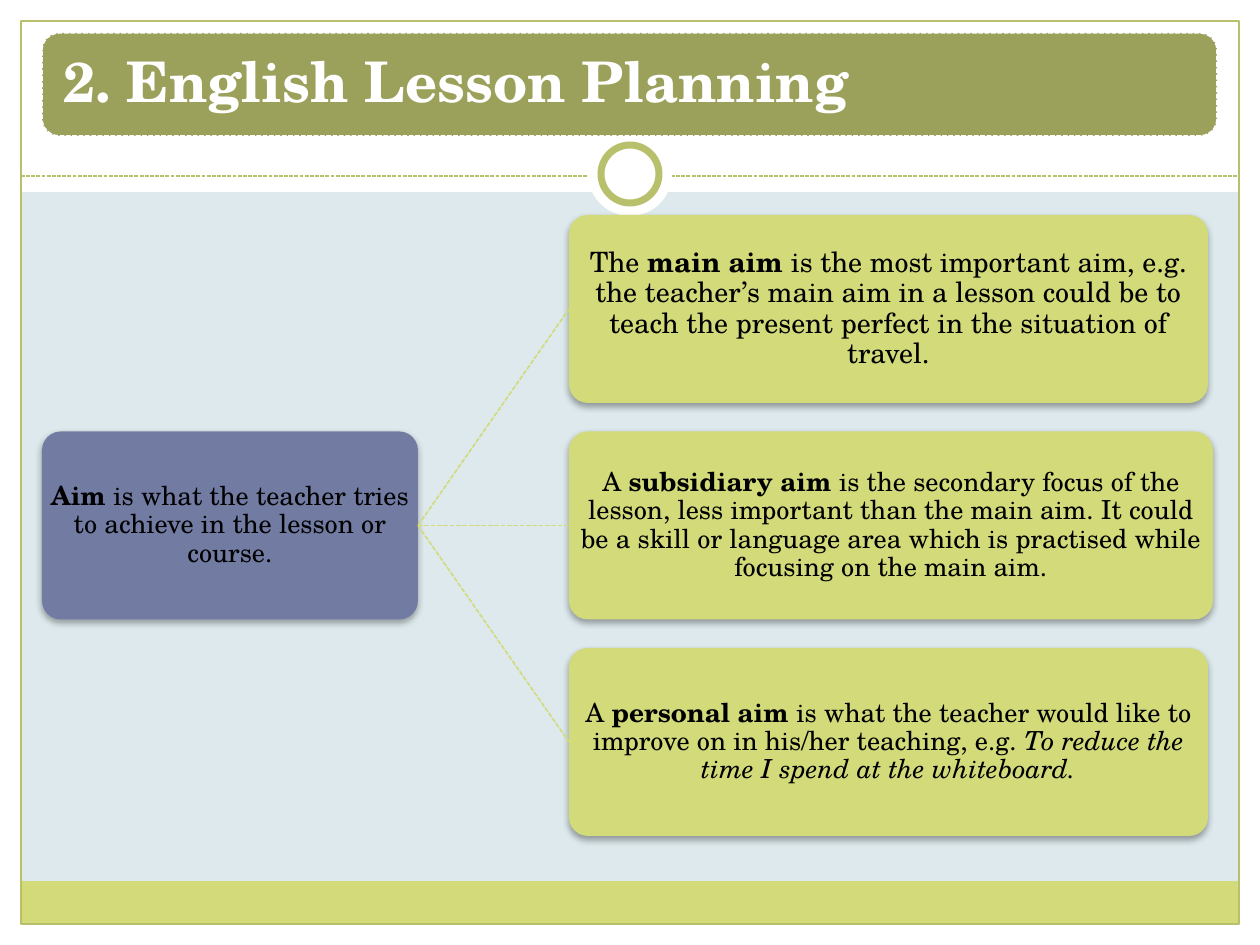
import pptx
import pptx.util
import pptx.dml.color
import pptx.enum.dml
import pptx.enum.shapes
import pptx.enum.text
from lxml import etree

SHAPE = pptx.enum.shapes.MSO_SHAPE
ALIGN = pptx.enum.text.PP_ALIGN
DRAWING = "http://schemas.openxmlformats.org/drawingml/2006/main"
FONT = "TeX Gyre Schola"

SLIDE_WIDTH, SLIDE_HEIGHT, MARGIN = 1260, 945, 21
WHITE, BLACK = "FFFFFF", "000000"
PALE_BLUE, LIME, GREEN = "DDE9EC", "D2DA7A", "B9C06C"
OLIVE, SLATE = "9BA15A", "727CA3"

AIM = [("Aim ", "b"), ("is what the teacher tries to achieve in the lesson or course.", "")]
# Width, text size and spans of each kind of aim
KINDS = [
    (639, 16, [("The ", ""), ("main aim ", "b"),
               ("is the most important aim, e.g. the teacher’s main aim in a lesson could "
                "be to teach the present perfect in the situation of travel.", "")]),
    (644, 15, [("A ", ""), ("subsidiary aim ", "b"),
               ("is the secondary focus of the lesson, less important than the main aim. "
                "It could be a skill or language area which is practised while focusing "
                "on the main aim.", "")]),
    (639, 15, [("A ", ""), ("personal aim ", "b"),
               ("is what the teacher would like to improve on in his/her teaching, e.g. ", ""),
               ("To reduce the time I spend at the whiteboard.", "i")]),
]


def px(length):
    return pptx.util.Emu(round(length * 914400 / 126))


def color(value):
    return pptx.dml.color.RGBColor.from_string(value)


def style_line(line, value, width, dashed=False):
    line.color.rgb = color(value)
    line.width = pptx.util.Pt(width)
    if dashed:
        line.dash_style = pptx.enum.dml.MSO_LINE.SQUARE_DOT


def add_box(page, kind, box, fill=None):
    shape = page.shapes.add_shape(kind, *map(px, box))
    shape.shadow.inherit = False
    if fill:
        shape.fill.solid()
        shape.fill.fore_color.rgb = color(fill)
    else:
        shape.fill.background()
    shape.line.fill.background()
    return shape


def add_dashed_line(page, start, end, value, width):
    line = page.shapes.add_connector(
        pptx.enum.shapes.MSO_CONNECTOR.STRAIGHT, *map(px, start + end))
    style_line(line.line, value, width, dashed=True)
    etree.SubElement(line._element.spPr, f"{{{DRAWING}}}effectLst")
    return line


def write(shape, spans, size, value, inset, align):
    frame = shape.text_frame
    frame.word_wrap = True
    frame.vertical_anchor = pptx.enum.text.MSO_ANCHOR.MIDDLE
    frame.margin_left = frame.margin_right = px(inset)
    frame.margin_top = frame.margin_bottom = px(inset)
    para = frame.paragraphs[0]
    para.alignment = align
    para.line_spacing = 0.9
    para.font.name = FONT
    para.font.size = pptx.util.Pt(size)
    para.font.color.rgb = color(value)
    for text, emphasis in spans:
        span = para.add_run()
        span.text = text
        if emphasis == "b":
            span.font.bold = True
        elif emphasis == "i":
            span.font.italic = True


def add_soft_shadow(shape):
    effects = shape._element.spPr.find(f"{{{DRAWING}}}effectLst")
    shadow = etree.SubElement(effects, f"{{{DRAWING}}}outerShdw", blurRad="50800",
                              dist="25400", dir="5400000", rotWithShape="0")
    shade = etree.SubElement(shadow, f"{{{DRAWING}}}srgbClr", val=BLACK)
    etree.SubElement(shade, f"{{{DRAWING}}}alpha", val="35000")


def add_card(page, box, fill, spans, size):
    card = add_box(page, SHAPE.ROUNDED_RECTANGLE, box, fill)
    card.adjustments[0] = 0.1
    add_soft_shadow(card)
    write(card, spans, size, BLACK, 1, ALIGN.CENTER)
    return card


def draw_backdrop(page, box):
    left, top, width, height = box
    right, bottom = left + width, top + height
    page.background.fill.solid()
    page.background.fill.fore_color.rgb = color(PALE_BLUE)

    # White header and margins
    for band in [(left, bottom - MARGIN, width, MARGIN), (left, top, width, 192),
                 (left, top, MARGIN, height), (right - MARGIN, top, MARGIN, height)]:
        add_box(page, SHAPE.RECTANGLE, band, WHITE)

    # Footer band and frame
    inner_width = width - 2 * MARGIN
    add_box(page, SHAPE.RECTANGLE,
            (left + MARGIN, bottom - MARGIN - 43, inner_width, 43), LIME)
    frame = add_box(page, SHAPE.RECTANGLE,
                    (left + MARGIN, top + MARGIN, inner_width, height - 2 * MARGIN))
    style_line(frame.line, GREEN, 0.75)

    # Divider with a ring at its centre
    add_dashed_line(page, (left + MARGIN, top + 176), (right - MARGIN, top + 176), GREEN, 0.75)
    center_x, center_y = left + width // 2, top + 174
    for size in (84, 58):
        ring = add_box(page, SHAPE.OVAL,
                       (center_x - size // 2, center_y - size // 2, size, size), WHITE)
    style_line(ring.line, GREEN, 4)


def draw_title(page, box):
    banner = add_box(page, SHAPE.ROUNDED_RECTANGLE, box, OLIVE)
    style_line(banner.line, WHITE, 0.9, dashed=True)
    write(banner, [("2. English Lesson Planning", "b")], 32, WHITE, 16, ALIGN.LEFT)


def draw_aims(page, box):
    left, top, width, height = box
    card_height = 188
    step = (height - card_height) / (len(KINDS) - 1)
    aim = add_card(page, (left, top + step, 376, card_height), SLATE, AIM, 15)
    for index, (card_width, size, spans) in enumerate(KINDS):
        card = add_card(page, (left + 527, top + index * step, card_width, card_height),
                        LIME, spans, size)
        branch = add_dashed_line(page, (left, top), (left, top), LIME, 0.9)
        branch.begin_connect(aim, 3)
        branch.end_connect(card, 1)


def main():
    deck = pptx.Presentation()
    deck.slide_width, deck.slide_height = px(SLIDE_WIDTH), px(SLIDE_HEIGHT)
    page = deck.slides.add_slide(deck.slide_layouts[6])
    draw_backdrop(page, (0, 0, SLIDE_WIDTH, SLIDE_HEIGHT))
    draw_title(page, (42, 33, 1175, 103))
    draw_aims(page, (42, 215, 1171, 621))
    deck.save("out.pptx")


if __name__ == "__main__":
    main()
